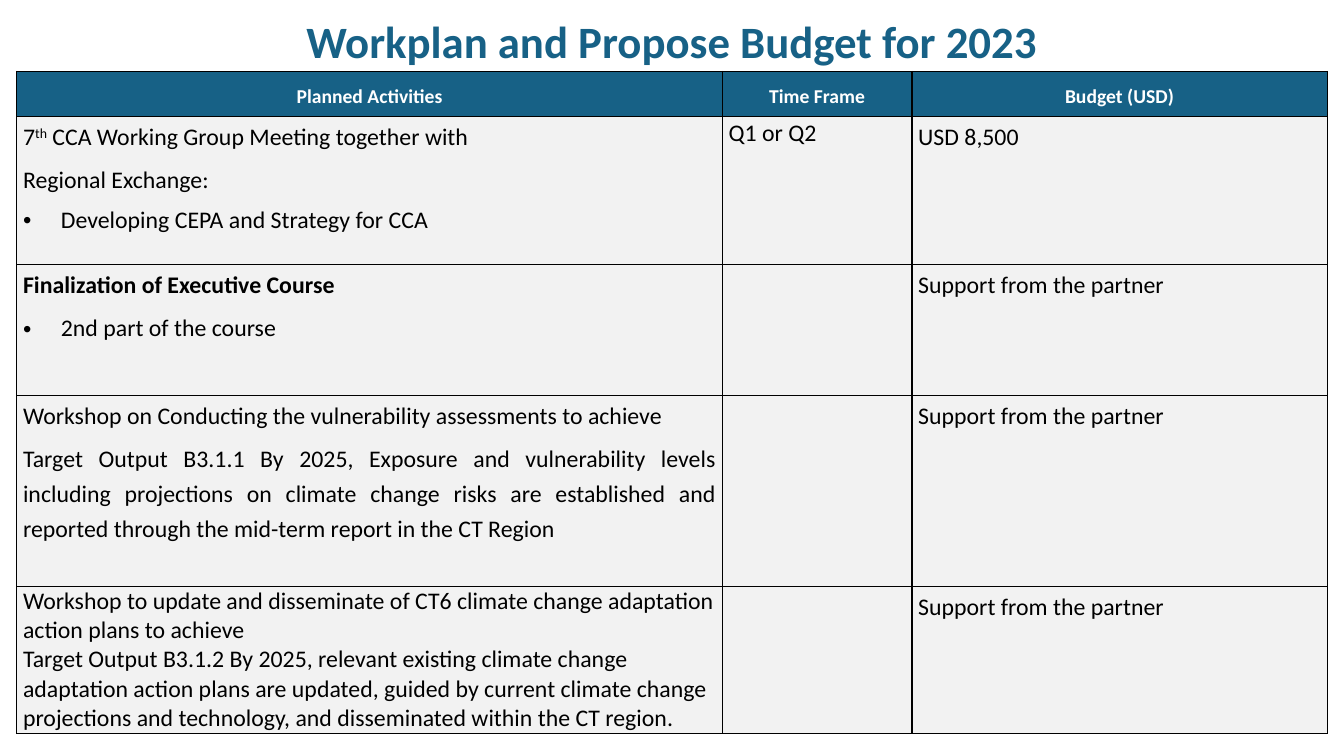
from lxml.etree import SubElement
from pptx import Presentation
from pptx.dml.color import RGBColor
from pptx.enum.text import MSO_ANCHOR, PP_ALIGN
from pptx.oxml import parse_xml
from pptx.oxml.ns import nsdecls, qn
from pptx.util import Pt

BLUE, GREY, BLACK, WHITE = "176186", "F2F2F2", "000000", "FFFFFF"
COLUMNS = [504, 135.4, 296.6]
ROWS = [32, 105.8, 93.6, 136.4, 105]
HEADERS = ["Planned Activities", "Time Frame", "Budget (USD)"]
JUST = {"align": PP_ALIGN.JUSTIFY, "spacing": 1.2}
NEXT = {**JUST, "before": 6}
SUPPORT = [("Support from the partner", JUST)]
ACTIVITIES = [
    ([([("7", {}), ("th", {"raised": True}),
        (" CCA Working Group Meeting\u00a0together with", {})], JUST),
      ("Regional Exchange:", NEXT),
      ("Developing CEPA and Strategy for CCA",
       {"spacing": 1.07, "before": 6, "bullet": True})],
     [("Q1 or Q2", {"spacing": 1.07})],
     [("USD 8,500", JUST)]),
    ([([("Finalization of Executive Course", {"bold": True})], JUST),
      ("2nd part of the course", {**NEXT, "bullet": True})],
     [], SUPPORT),
    ([("Workshop on Conducting the vulnerability assessments to achieve", JUST),
      ("Target Output B3.1.1 By 2025, Exposure and vulnerability levels "
       "including projections on climate change risks are established and "
       "reported through the mid-term report in the CT Region", NEXT)],
     [], SUPPORT),
    ([("Workshop to update and disseminate of CT6 climate change adaptation "
       "action plans to achieve", {}),
      ("Target Output B3.1.2 By 2025, relevant existing climate change "
       "adaptation action plans are updated, guided by current climate change "
       "projections and technology, and disseminated within the CT region.", {})],
     [], SUPPORT),
]


def rgb(value):
    """Turn a hex string into a colour."""
    return RGBColor.from_string(value)


def add_run(p, text, size, color, bold=False, raised=False):
    """Add one formatted run to a paragraph."""
    r = p.add_run()
    r.text = text
    r.font.name = "Calibri"
    r.font.size = Pt(size)
    r.font.bold = bold
    r.font.color.rgb = rgb(color)
    if raised:
        r.font._element.set("baseline", "30000")


def format_paragraph(p, align=PP_ALIGN.LEFT, spacing=1.0, before=0, bullet=False):
    """Set alignment, spacing and an optional hanging bullet."""
    p.alignment = align
    p.line_spacing = spacing
    p.space_before = Pt(before)
    if bullet:
        pPr = p._p.get_or_add_pPr()
        pPr.set("marL", str(Pt(27)))
        pPr.set("indent", str(-Pt(27)))
        SubElement(pPr, qn("a:buFont")).set("typeface", "Arial")
        SubElement(pPr, qn("a:buChar")).set("char", "•")


def style_cell(cell, fill):
    """Set the fill, margins and black borders of a cell."""
    cell.fill.solid()
    cell.fill.fore_color.rgb = rgb(fill)
    cell.margin_left = cell.margin_right = Pt(4.5)
    cell.margin_top, cell.margin_bottom = Pt(0.6), Pt(0)
    tcPr = cell._tc.get_or_add_tcPr()
    for i, side in enumerate(("lnL", "lnR", "lnT", "lnB")):
        tcPr.insert(i, parse_xml(
            f'<a:{side} {nsdecls("a")} w="{Pt(1)}"><a:solidFill>'
            f'<a:srgbClr val="{BLACK}"/></a:solidFill></a:{side}>'))


def fill_cell(cell, paragraphs):
    """Write the paragraphs of a body cell."""
    tf = cell.text_frame
    for i, (content, layout) in enumerate(paragraphs):
        p = tf.add_paragraph() if i else tf.paragraphs[0]
        format_paragraph(p, **layout)
        runs = [(content, {})] if isinstance(content, str) else content
        for text, style in runs:
            add_run(p, text, 17, BLACK, **style)


def add_title(slide, left, top, width, height):
    """Add the centred slide title in the given box."""
    sp = slide.shapes.add_textbox(Pt(left), Pt(top), Pt(width), Pt(height))
    tf = sp.text_frame
    tf.word_wrap = True
    tf.vertical_anchor = MSO_ANCHOR.MIDDLE
    p = tf.paragraphs[0]
    format_paragraph(p, PP_ALIGN.CENTER, 1.07)
    add_run(p, "Workplan and Propose Budget for 2023", 32, BLUE, bold=True)


def add_workplan(slide, left, top):
    """Add the table of activities, time frames and budgets."""
    table = slide.shapes.add_table(
        len(ROWS), len(COLUMNS), Pt(left), Pt(top),
        Pt(sum(COLUMNS)), Pt(sum(ROWS))).table
    for column, width in zip(table.columns, COLUMNS):
        column.width = Pt(width)
    for row, height in zip(table.rows, ROWS):
        row.height = Pt(height)
    for cell, text in zip(table.rows[0].cells, HEADERS):
        style_cell(cell, BLUE)
        cell.vertical_anchor = MSO_ANCHOR.MIDDLE
        p = cell.text_frame.paragraphs[0]
        format_paragraph(p, PP_ALIGN.CENTER, 1.2)
        add_run(p, text, 14, WHITE, bold=True)
    for i, activity in enumerate(ACTIVITIES, 1):
        for cell, paragraphs in zip(table.rows[i].cells, activity):
            style_cell(cell, GREY)
            fill_cell(cell, paragraphs)


def main():
    """Build and save the slide."""
    prs = Presentation()
    prs.slide_width, prs.slide_height = Pt(960), Pt(540)
    slide = prs.slides.add_slide(prs.slide_layouts[6])
    add_title(slide, 66, 0, 828, 55.5)
    add_workplan(slide, 12, 51)
    prs.save("out.pptx")


if __name__ == "__main__":
    main()
